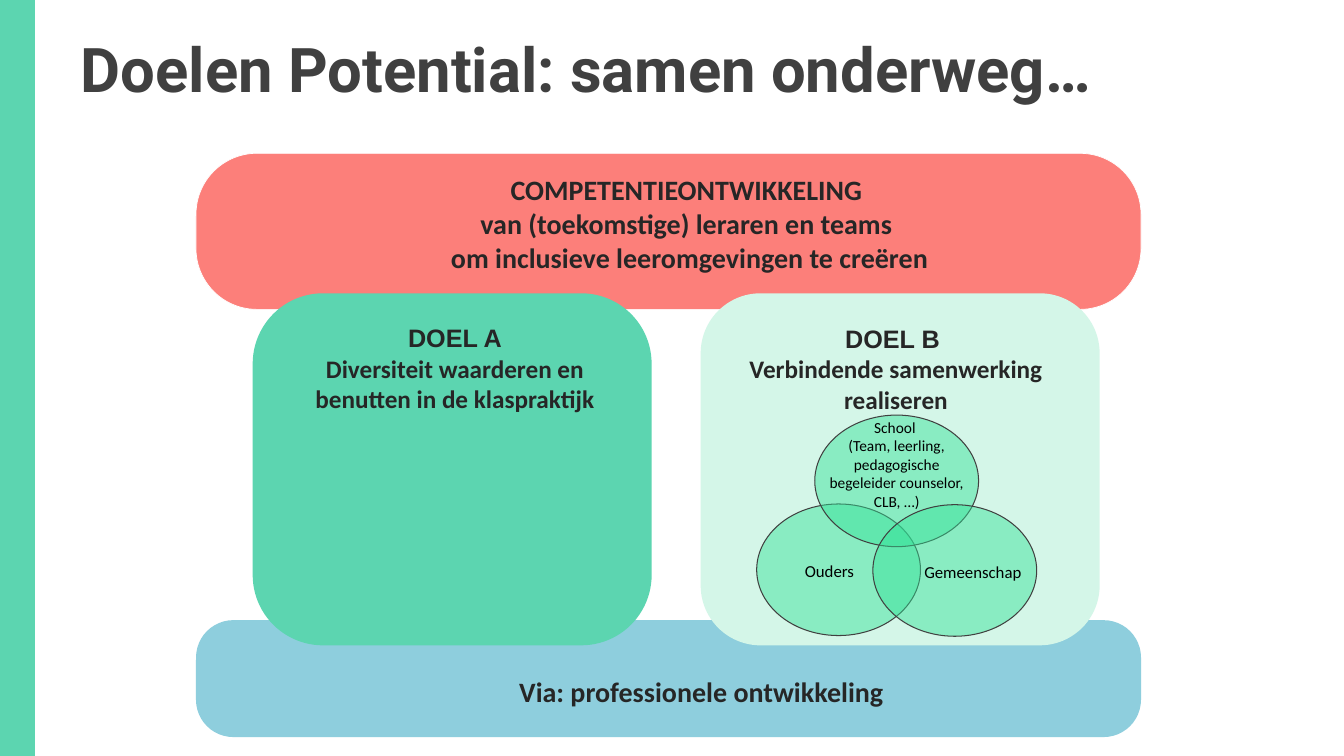
from pptx import Presentation
from pptx.dml.color import RGBColor
from pptx.enum.shapes import MSO_SHAPE as Form
from pptx.enum.text import MSO_ANCHOR as Anchor, MSO_AUTO_SIZE as Fit, PP_ALIGN as Align
from pptx.oxml.ns import qn
from pptx.util import Pt
from lxml.etree import SubElement

WHITE = RGBColor(0xFF, 0xFF, 0xFF)
BLACK = RGBColor(0, 0, 0)
INK = RGBColor(0x26, 0x26, 0x26)
GRAY = RGBColor(0x40, 0x40, 0x40)
GREEN = RGBColor(0x5C, 0xD5, 0xB0)
MINT = RGBColor(0xD4, 0xF6, 0xE8)
VIVID = RGBColor(0x32, 0xE2, 0x97)
CORAL = RGBColor(0xFC, 0x7F, 0x7A)
BLUE = RGBColor(0x8E, 0xCE, 0xDD)


class Deck:
    def __init__(self):
        self.prs = Presentation()
        self.prs.slide_width, self.prs.slide_height = Pt(960), Pt(540)
        self.slide = self.prs.slides.add_slide(self.prs.slide_layouts[5])
        self.head = dict(name="Roboto", size=Pt(44), bold=True, color=GRAY)
        self.bold = dict(name="Calibri", size=Pt(20), bold=True, color=INK)
        self.goal = dict(self.bold, size=Pt(18))
        self.note = dict(name="Calibri", size=Pt(12), bold=False, color=BLACK)

    def style(self, font, look):
        for key, value in look.items():
            if key == "color":
                font.color.rgb = value
            else:
                setattr(font, key, value)

    def put(self, frame, lines, align):
        """Fill a frame from (text, look) pairs, one paragraph each."""
        layout = dict(word_wrap=True, auto_size=Fit.NONE, vertical_anchor=Anchor.TOP)
        for key, value in layout.items():
            setattr(frame, key, value)
        for i, (text, look) in enumerate(lines):
            para = frame.add_paragraph() if i else frame.paragraphs[0]
            para.alignment = align
            run = para.add_run()
            run.text = text
            self.style(run.font, look)

    def title(self, box, text):
        shape = self.slide.shapes.title
        for key, value in zip(("left", "top", "width", "height"), box):
            setattr(shape, key, Pt(value))
        self.put(shape.text_frame, [(text, self.head)], Align.LEFT)

    def text(self, box, *lines):
        shape = self.slide.shapes.add_textbox(*map(Pt, box))
        self.put(shape.text_frame, lines, Align.CENTER)

    def shape(self, form, box, fill, line=None, width=0.75, round=None, alpha=None):
        shape = self.slide.shapes.add_shape(form, *map(Pt, box))
        shape.shadow.inherit = False
        shape.fill.solid()
        shape.fill.fore_color.rgb = fill
        if alpha:
            color = shape.element.spPr.find(qn("a:solidFill"))[0]
            SubElement(color, qn("a:alpha")).set("val", str(alpha * 1000))
        if line is None:
            shape.line.fill.background()
        else:
            shape.line.color.rgb = line
            shape.line.width = Pt(width)
        if round:
            shape.adjustments[0] = round


def main():
    deck = Deck()

    # Side bar and title
    deck.shape(Form.RECTANGLE, (0, 0, 25, 540), GREEN)
    deck.title((50.5, 18.5, 853, 60.5), "Doelen Potential: samen onderweg…")

    # Base and roof, with the two goals between them
    panel = Form.ROUNDED_RECTANGLE
    deck.shape(panel, (140, 443, 675, 83.5), BLUE, round=0.32)
    deck.shape(panel, (140, 109.5, 675, 111.5), CORAL, WHITE, 0.5, round=0.39)
    deck.shape(panel, (500.5, 209.5, 285, 251.5), MINT, round=0.17)
    deck.shape(panel, (180.5, 209.5, 285, 251.5), GREEN, round=0.2)

    # Three partners as overlapping circles
    for left, top in ((540.5, 360), (582, 296.5), (623.5, 360.5)):
        deck.shape(Form.OVAL, (left, top, 117, 94), VIVID, GRAY, alpha=46)
    small = dict(deck.note, size=Pt(11))
    deck.text((582, 295, 117, 74), ("School ", small),
              ("(Team, leerling, pedagogische begeleider counselor, CLB, …)", small))
    deck.text((534, 397, 117, 22), ("Ouders", deck.note))
    deck.text((636.5, 397.5, 117, 22), ("Gemeenschap", deck.note))

    # Goal texts
    label = dict(deck.goal, name="Arial")
    deck.text((192, 227, 266, 114), ("DOEL A", label),
              ("Diversiteit waarderen en benutten in de klaspraktijk", deck.goal))
    deck.text((507, 227.5, 266, 73), ("DOEL B ", label),
              ("Verbindende samenwerking realiseren", deck.goal))

    # Roof and base texts
    roof = ("COMPETENTIEONTWIKKELING ", "van (toekomstige) leraren en teams ",
            "om inclusieve leeromgevingen te creëren")
    deck.text((258, 120, 469, 80), *((line, deck.bold) for line in roof))
    deck.text((266.5, 478, 469, 32), ("Via: professionele ontwikkeling", deck.bold))

    deck.prs.save("out.pptx")


if __name__ == "__main__":
    main()
